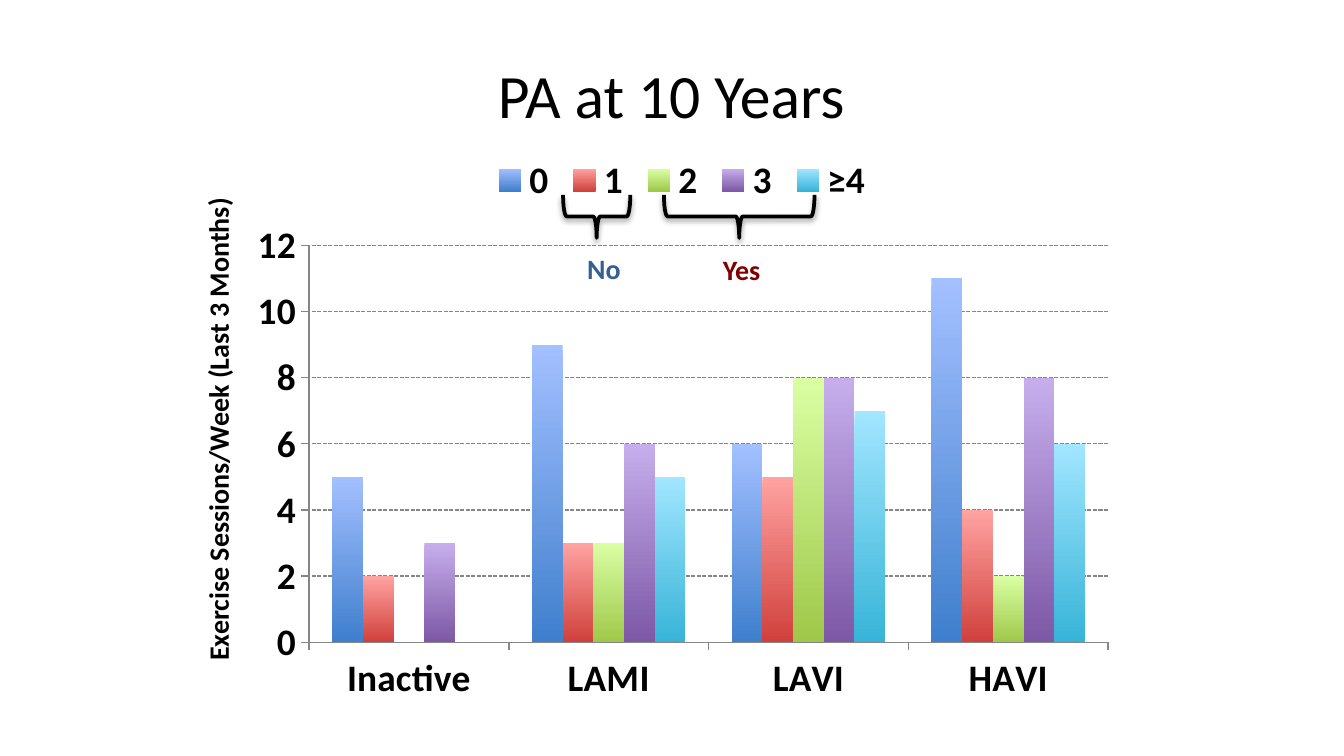
from dataclasses import dataclass

from lxml import etree
from pptx import Presentation
from pptx.chart.data import CategoryChartData
from pptx.dml.color import RGBColor
from pptx.enum import chart as charts, dml, shapes, text
from pptx.oxml import parse_xml
from pptx.oxml.ns import nsdecls, qn
from pptx.util import Inches, Pt


@dataclass(frozen=True)
class Theme:
    font: str = "Calibri"
    ink: str = "000000"
    axis: str = "868686"
    no: str = "376092"
    yes: str = "800000"
    title_size: int = 33
    chart_size: int = 20
    label_size: int = 15


@dataclass(frozen=True)
class Box:
    left: float
    top: float
    width: float
    height: float

    def lengths(self) -> tuple:
        return tuple(map(Inches, (self.left, self.top, self.width, self.height)))


@dataclass(frozen=True)
class Label:
    wording: str
    box: Box
    size: int
    color: str
    bold: bool = True
    rotation: int = 0
    centered: bool = False


@dataclass(frozen=True)
class Sessions:
    name: str
    values: tuple
    light: str
    dark: str


THEME = Theme()
CATEGORIES = ("Inactive", "LAMI", "LAVI", "HAVI")
SERIES = (
    Sessions("0", (5, 9, 6, 11), "A3C0FF", "3F7FCD"),
    Sessions("1", (2, 3, 5, 4), "FFA3A1", "D0403C"),
    Sessions("2", (0, 3, 8, 2), "DAFFA3", "9FC84A"),
    Sessions("3", (3, 6, 8, 8), "C6AEEC", "7D58A6"),
    Sessions("≥4", (0, 5, 7, 6), "A2E6FF", "37B4D8"),
)
TITLE = Label("PA at 10 Years", Box(1.62, 0.23, 6.75, 0.94), THEME.title_size,
              THEME.ink, bold=False, centered=True)
LABELS = (
    Label("Exercise Sessions/Week (Last 3 Months)", Box(-0.22, 3, 3.68, 0.35),
          THEME.label_size, THEME.ink, rotation=270),
    Label("No", Box(4.27, 1.82, 0.45, 0.35), THEME.label_size, THEME.no),
    Label("Yes", Box(5.28, 1.83, 0.48, 0.35), THEME.label_size, THEME.yes),
)
BRACES = (Box(4.28, 1.36, 0.32, 0.5), Box(5.34, 1.05, 0.32, 1.12))
CHART_BOX = Box(1.78, 1.04, 6.59, 4.27)
PLOT_PERCENT = Box(7.9, 18.4, 90.2, 69.2)


def rgb(color: str) -> RGBColor:
    return RGBColor.from_string(color)


def style_font(font, size: int, color: str, bold: bool) -> None:
    font.name = THEME.font
    font.size = Pt(size)
    font.bold = bold
    font.color.rgb = rgb(color)


def add_label(slide, label: Label) -> None:
    shape = slide.shapes.add_textbox(*label.box.lengths())
    shape.rotation = label.rotation
    frame = shape.text_frame
    frame.word_wrap = label.centered
    if label.centered:
        frame.vertical_anchor = text.MSO_ANCHOR.MIDDLE
    paragraph = frame.paragraphs[0]
    paragraph.alignment = text.PP_ALIGN.CENTER if label.centered else text.PP_ALIGN.LEFT
    run = paragraph.add_run()
    run.text = label.wording
    style_font(run.font, label.size, label.color, label.bold)


def add_brace(slide, box: Box) -> None:
    """Add a left brace turned to point down, with a soft shadow."""
    shape = slide.shapes.add_shape(shapes.MSO_SHAPE.LEFT_BRACE, *box.lengths())
    shape.rotation = 270
    shape.fill.background()
    shape.line.color.rgb = rgb(THEME.ink)
    shape.line.width = Pt(2)
    shape.shadow.inherit = False
    effects = shape._element.spPr.find(qn("a:effectLst"))
    effects.append(parse_xml(
        f'<a:outerShdw {nsdecls("a")} blurRad="{Pt(3.1)}" dist="{Pt(1.6)}" '
        f'dir="5400000" rotWithShape="0"><a:srgbClr val="{THEME.ink}">'
        '<a:alpha val="38000"/></a:srgbClr></a:outerShdw>'))


def place_plot(chart, percent: Box) -> None:
    """Fix the inner plot area as percentages of the chart."""
    plot_area = chart._chartSpace.chart.plotArea
    for old in plot_area.findall(qn("c:layout")):
        plot_area.remove(old)
    layout = etree.Element(qn("c:layout"))
    manual = etree.SubElement(layout, qn("c:manualLayout"))
    settings = (("layoutTarget", "inner"), ("xMode", "edge"), ("yMode", "edge"),
                ("x", percent.left / 100), ("y", percent.top / 100),
                ("w", percent.width / 100), ("h", percent.height / 100))
    for name, value in settings:
        etree.SubElement(manual, qn(f"c:{name}")).set("val", str(value))
    plot_area.insert(0, layout)


def add_sessions_chart(slide) -> None:
    data = CategoryChartData()
    data.categories = CATEGORIES
    for sessions in SERIES:
        data.add_series(sessions.name, sessions.values)
    chart = slide.shapes.add_chart(
        charts.XL_CHART_TYPE.COLUMN_CLUSTERED, *CHART_BOX.lengths(), data).chart
    style_font(chart.font, THEME.chart_size, THEME.ink, True)
    chart.has_title = False
    chart.has_legend = True
    chart.legend.position = charts.XL_LEGEND_POSITION.TOP
    chart.legend.include_in_layout = False
    style_font(chart.legend.font, THEME.chart_size, THEME.ink, True)

    for axis in (chart.category_axis, chart.value_axis):
        axis.major_tick_mark = charts.XL_TICK_MARK.OUTSIDE
        axis.format.line.color.rgb = rgb(THEME.axis)
        style_font(axis.tick_labels.font, THEME.chart_size, THEME.ink, True)
    value_axis = chart.value_axis
    value_axis.minimum_scale, value_axis.maximum_scale = 0, 12
    value_axis.major_unit = 2
    grid = value_axis.major_gridlines.format.line
    grid.color.rgb = rgb(THEME.axis)
    grid.width = Pt(0.75)
    grid.dash_style = dml.MSO_LINE.SQUARE_DOT

    plot = chart.plots[0]
    plot.gap_width = 150
    plot.overlap = 0
    plot.vary_by_categories = False
    for series, sessions in zip(plot.series, SERIES):
        fill = series.format.fill
        fill.gradient()
        fill.gradient_angle = 270
        for stop, color in zip(fill.gradient_stops, (sessions.light, sessions.dark)):
            stop.color.rgb = rgb(color)
    place_plot(chart, PLOT_PERCENT)


def main() -> None:
    presentation = Presentation()
    presentation.slide_width = Inches(10)
    presentation.slide_height = presentation.slide_width * 9 // 16
    slide = presentation.slides.add_slide(presentation.slide_layouts[6])
    add_label(slide, TITLE)
    add_sessions_chart(slide)
    for box in BRACES:
        add_brace(slide, box)
    for label in LABELS:
        add_label(slide, label)
    presentation.save("out.pptx")


if __name__ == "__main__":
    main()
